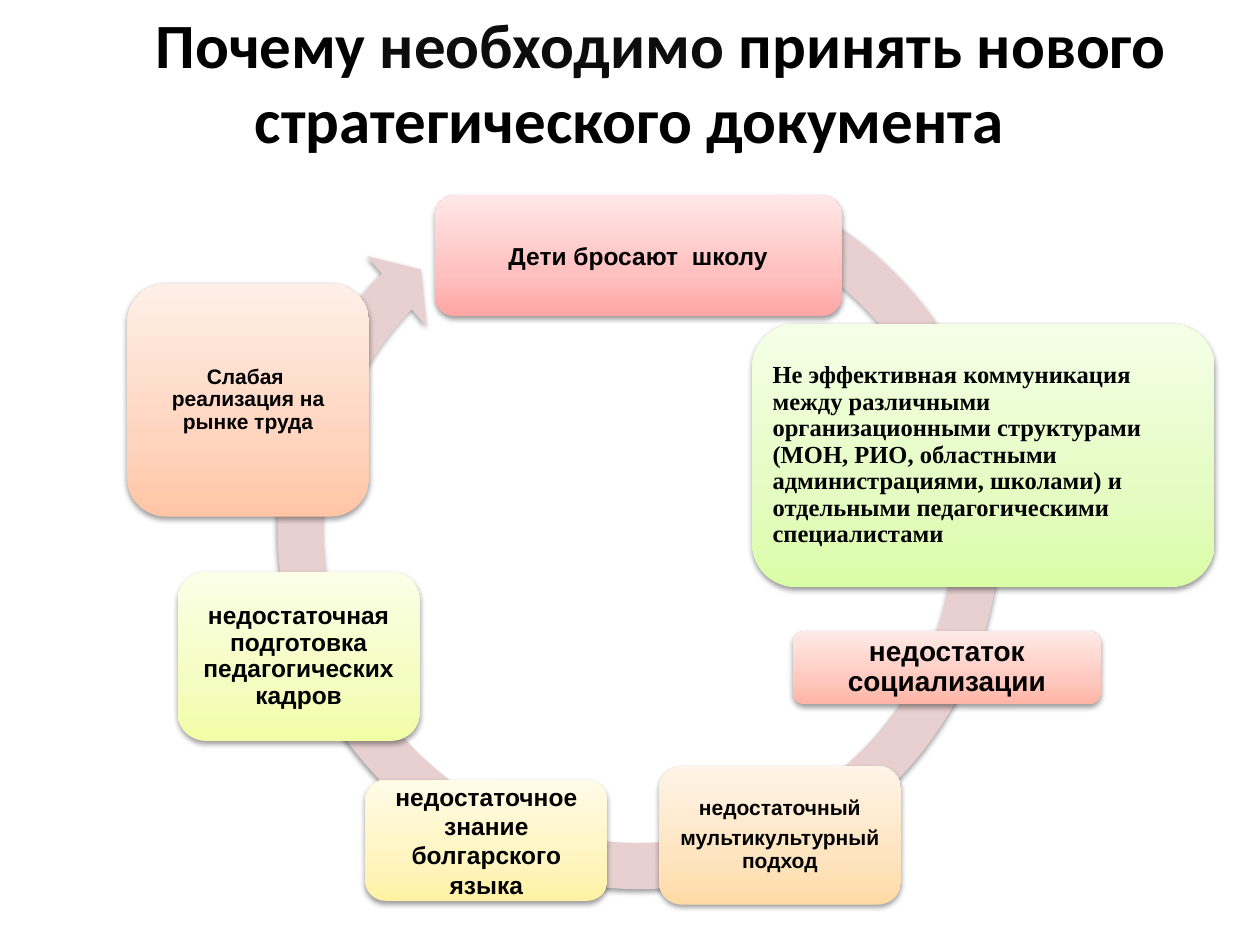
from lxml import etree
from pptx import Presentation
from pptx.dml.color import RGBColor
from pptx.enum.shapes import MSO_SHAPE
from pptx.enum.text import MSO_ANCHOR, MSO_AUTO_SIZE, PP_ALIGN
from pptx.oxml.ns import qn
from pptx.util import Inches, Pt

CENTER, LEFT = PP_ALIGN.CENTER, PP_ALIGN.LEFT
MIDDLE = MSO_ANCHOR.MIDDLE
CIRCULAR_ARROW = MSO_SHAPE.CIRCULAR_ARROW
ROUNDED = MSO_SHAPE.ROUNDED_RECTANGLE
NO_AUTOFIT = MSO_AUTO_SIZE.NONE
TITLE_ONLY = 5

COLORS = {"text": "000000", "soft_text": "0D0D0D", "arrow": "E8D0D0", "shadow": "000000"}
# Gradient colours from the bottom of a box to its top
GRADIENTS = {
    "red": ("FFA6A5", "FFC0BF", "FFE7E7"),
    "green": ("DAFDA7", "E4FCC2", "F5FFE7"),
    "coral": ("FFB4A5", "FFC9BF", "FFEAE7"),
    "orange": ("FFDAA5", "FEE4C0", "FFF4E7"),
    "yellow": ("FFF2A5", "FEF5C0", "FFFBE7"),
    "lime": ("F1FEA6", "F4FDC1", "FBFFE7"),
    "peach": ("FFC5A5", "FFD5BF", "FFEFE7"),
}
GRADIENT_POSITIONS = (0, 35, 100)

# Clockwise from the top: left, top, width, height, gradient, paragraphs, text format
CAUSES = [
    (3.45, 1.55, 3.23, 0.96, "red", ["Дети бросают  школу"], {"line_spacing": 1.0}),
    (5.97, 2.57, 3.67, 2.09, "green",
     ["Не эффективная коммуникация между различными организационными структурами "
      "(МОН, РИО, областными администрациями, школами) и отдельными "
      "педагогическими специалистами"],
     {"font": "Times New Roman", "align": LEFT}),
    (6.29, 5.01, 2.45, 0.58, "coral", ["недостаток социализации"], {"size": 16}),
    (5.23, 6.08, 1.92, 1.1, "orange", ["недостаточный", "мультикультурный подход"],
     {"size": 12}),
    (2.9, 6.19, 1.92, 0.96, "yellow", ["недостаточное знание болгарского языка"],
     {"line_spacing": 1.0}),
    (1.41, 4.54, 1.92, 1.34, "lime", ["недостаточная подготовка педагогических кадров"], {}),
    (1.01, 2.25, 1.92, 1.85, "peach", ["Слабая  реализация на рынке труда"], {"size": 12}),
]


def add_run(paragraph, text, size=14, font="Arial", color="text", bold=True):
    run = paragraph.add_run()
    run.text = text
    run.font.size = Pt(size)
    run.font.name = font
    run.font.bold = bold
    run.font.color.rgb = RGBColor.from_string(COLORS[color])


def write_paragraphs(frame, texts, size=14, align=CENTER, line_spacing=0.9, **run_format):
    for index, text in enumerate(texts):
        paragraph = frame.add_paragraph() if index else frame.paragraphs[0]
        paragraph.alignment = align
        paragraph.line_spacing = line_spacing
        paragraph.space_after = Pt(size * 0.35)
        add_run(paragraph, text, size=size, **run_format)


def set_gradient(shape, colors):
    """Fill the shape with a gradient that runs from bottom to top."""
    shape.fill.gradient()
    shape.fill.gradient_angle = 90
    stops = shape.element.spPr.find(".//" + qn("a:gsLst"))
    for stop in list(stops):
        stops.remove(stop)
    for position, color in zip(GRADIENT_POSITIONS, colors):
        stop = etree.SubElement(stops, qn("a:gs"), pos=str(position * 1000))
        etree.SubElement(stop, qn("a:srgbClr"), val=color)


def add_shadow(shape):
    """Give the shape a soft shadow straight below it."""
    shape.shadow.inherit = False
    effects = shape.element.spPr.find(qn("a:effectLst"))
    shadow = etree.SubElement(effects, qn("a:outerShdw"), blurRad=str(Pt(3.15)),
                              dist=str(Pt(1.57)), dir="5400000", rotWithShape="0")
    color = etree.SubElement(shadow, qn("a:srgbClr"), val=COLORS["shadow"])
    etree.SubElement(color, qn("a:alpha"), val="38000")


def add_shape(slide, kind, left, top, width, height):
    shape = slide.shapes.add_shape(kind, Inches(left), Inches(top),
                                   Inches(width), Inches(height))
    shape.line.fill.background()
    add_shadow(shape)
    return shape


def add_cycle_arrow(slide):
    arrow = add_shape(slide, CIRCULAR_ARROW, 2.02, 1.14, 6.1, 6.1)
    for index, value in enumerate((0.06, 3.31, 134.6, 175.81, 0.06)):
        arrow.adjustments[index] = value
    arrow.fill.solid()
    arrow.fill.fore_color.rgb = RGBColor.from_string(COLORS["arrow"])


def add_cause(slide, left, top, width, height, gradient, texts, text_format):
    box = add_shape(slide, ROUNDED, left, top, width, height)
    set_gradient(box, GRADIENTS[gradient])
    frame = box.text_frame
    frame.word_wrap = True
    frame.vertical_anchor = MIDDLE
    frame.margin_left = frame.margin_right = Inches(0.06)
    frame.margin_top = frame.margin_bottom = Inches(0.06)
    write_paragraphs(frame, texts, **text_format)


def add_title(slide):
    title = slide.shapes.title
    title.left, title.top = Inches(0.35), Inches(0.13)
    title.width, title.height = Inches(9.29), Inches(1.02)
    frame = title.text_frame
    frame.word_wrap = True
    frame.auto_size = NO_AUTOFIT
    frame.vertical_anchor = MIDDLE
    paragraph = frame.paragraphs[0]
    paragraph.alignment = CENTER
    properties = paragraph._p.get_or_add_pPr()
    properties.set("marL", "0")
    properties.set("indent", str(Inches(0.5)))
    for text, color in (("Почему ", "text"), ("необходимо", "soft_text"),
                        (" принять нового стратегического документа", "text")):
        add_run(paragraph, text, size=36, font="Calibri", color=color)


def main():
    presentation = Presentation()
    presentation.slide_width, presentation.slide_height = Inches(10), Inches(7.5)
    slide = presentation.slides.add_slide(presentation.slide_layouts[TITLE_ONLY])
    add_title(slide)
    add_cycle_arrow(slide)
    for cause in CAUSES:
        add_cause(slide, *cause)
    presentation.save("out.pptx")


if __name__ == "__main__":
    main()
